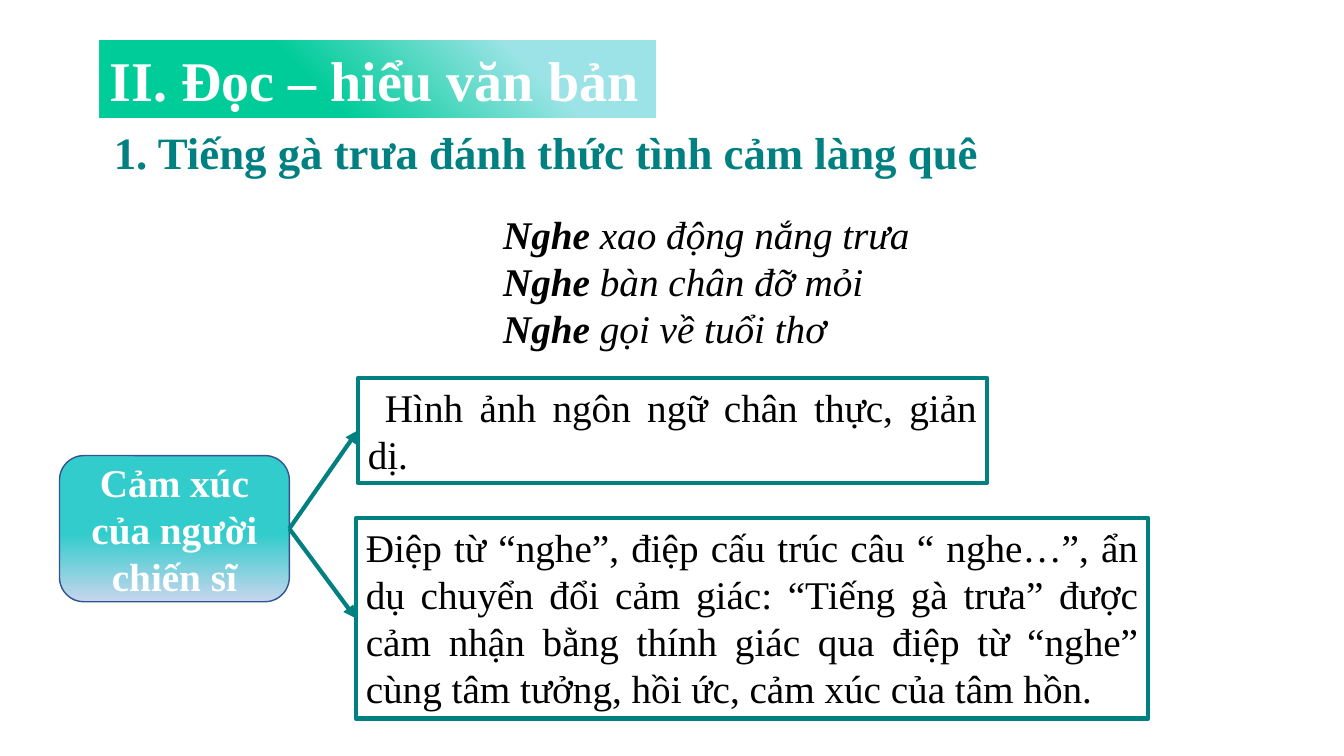
from dataclasses import dataclass
from typing import Optional

from lxml.etree import SubElement
from pptx import Presentation
from pptx.dml.color import RGBColor
from pptx.dml.fill import FillFormat
from pptx.enum.shapes import MSO_CONNECTOR, MSO_SHAPE
from pptx.enum.text import MSO_ANCHOR, PP_ALIGN
from pptx.oxml.ns import qn
from pptx.shapes.autoshape import Shape
from pptx.slide import Slide
from pptx.util import Inches, Pt

WIDE, HIGH = Inches(13.33), Inches(7.5)
FONT = "Times New Roman"
HUES = {
    "white": "FFFFFF", "black": "000000", "teal": "008080",
    "aqua": "9BE3E6", "green": "00CC99",
    "cyan": "33CCCC", "mist": "C7D5ED", "navy": "325491",
}


@dataclass(frozen=True)
class Fade:
    """Two (percent, colour) stops; turn is counter-clockwise degrees."""
    first: tuple[float, str]
    last: tuple[float, str]
    turn: float


@dataclass(frozen=True)
class Block:
    """Place and size are in percent of the slide's width and height."""
    left: float
    top: float
    width: float
    height: float
    lines: tuple[tuple[str, str], ...]  # bold start and plain rest
    size: float = 28
    color: str = "black"
    italic: bool = False
    form: Optional[MSO_SHAPE] = None
    fade: Optional[Fade] = None
    edge: Optional[tuple[str, float]] = None
    align: PP_ALIGN = PP_ALIGN.LEFT
    anchor: MSO_ANCHOR = MSO_ANCHOR.TOP
    inset: float = 0.1
    indent: float = 0
    spacing: float = 1
    after: float = 0


HEAD = Block(7.43, 5.33, 41.41, 10.27, (("II. Đọc – hiểu văn bản", ""),),
             size=40, color="white", form=MSO_SHAPE.RECTANGLE,
             fade=Fade((24, "aqua"), (61, "green"), 225))
TOPIC = Block(7.73, 14.8, 86.87, 8.93,
              (("1. Tiếng gà trưa đánh thức tình cảm làng quê", ""),),
              size=32, color="teal", spacing=1.15, after=10)
POEM = Block(26.48, 27.2, 45.99, 20.13,
             (("Nghe", " xao động nắng trưa"),
              ("Nghe", " bàn chân đỡ mỏi"),
              ("Nghe", " gọi về tuổi thơ")),
             italic=True, inset=1.46)
CAUSE = Block(4.43, 60.27, 17.1, 19.33, (("Cảm xúc của người chiến sĩ", ""),),
              color="white", form=MSO_SHAPE.ROUNDED_RECTANGLE,
              fade=Fade((54, "cyan"), (100, "mist"), 270), edge=("navy", 1),
              align=PP_ALIGN.CENTER, anchor=MSO_ANCHOR.MIDDLE)
NOTES = (
    Block(26.63, 50, 46.81, 13.87,
          (("", "Hình ảnh ngôn ngữ chân thực, giản dị."),),
          form=MSO_SHAPE.RECTANGLE, edge=("teal", 3),
          align=PP_ALIGN.JUSTIFY, indent=0.17),
    Block(26.48, 68.53, 58.96, 26.53,
          (("", "Điệp từ “nghe”, điệp cấu trúc câu “ nghe…”, ẩn dụ chuyển đổi "
                "cảm giác: “Tiếng gà trưa” được cảm nhận bằng thính giác qua "
                "điệp từ “nghe” cùng tâm tưởng, hồi ức, cảm xúc của tâm hồn."),),
          form=MSO_SHAPE.RECTANGLE, edge=("teal", 3), align=PP_ALIGN.JUSTIFY),
)


def hue(name: str) -> RGBColor:
    return RGBColor.from_string(HUES[name])


def blend(fill: FillFormat, fade: Fade) -> None:
    fill.gradient()
    fill.gradient_angle = fade.turn
    for stop, (share, name) in zip(fill.gradient_stops, (fade.first, fade.last)):
        stop.position = share / 100
        stop.color.rgb = hue(name)


def write(shape: Shape, block: Block) -> None:
    frame = shape.text_frame
    frame.word_wrap = True
    frame.vertical_anchor = block.anchor
    frame.margin_left = Inches(block.inset)
    for row, (strong, plain) in enumerate(block.lines):
        para = frame.add_paragraph() if row else frame.paragraphs[0]
        para.alignment = block.align
        para.line_spacing = block.spacing
        para.space_after = Pt(block.after)
        if block.indent:
            para._p.get_or_add_pPr().set("indent", str(Inches(block.indent)))
        font = para.font
        font.name, font.size = FONT, Pt(block.size)
        font.italic, font.bold = block.italic, not plain
        font.color.rgb = hue(block.color)
        for text in filter(None, (strong, plain)):
            run = para.add_run()
            run.text = text
            if strong and plain:
                run.font.bold = text == strong


def draw(slide: Slide, block: Block) -> Shape:
    area = [int(side * share / 100) for side, share in (
        (WIDE, block.left), (HIGH, block.top),
        (WIDE, block.width), (HIGH, block.height))]
    if block.form is None:
        shape = slide.shapes.add_textbox(*area)
    else:
        shape = slide.shapes.add_shape(block.form, *area)
        shape.shadow.inherit = False
        if block.fade:
            blend(shape.fill, block.fade)
        else:
            shape.fill.background()
        if block.edge:
            name, width = block.edge
            shape.line.color.rgb = hue(name)
            shape.line.width = Pt(width)
        else:
            shape.line.fill.background()
    write(shape, block)
    return shape


def link(slide: Slide, start: Shape, end: Shape) -> None:
    """Arrow from the right side of start to the left side of end."""
    arrow = slide.shapes.add_connector(MSO_CONNECTOR.STRAIGHT, 0, 0, 0, 0)
    arrow.begin_connect(start, 3)
    arrow.end_connect(end, 1)
    arrow.line.color.rgb = hue("teal")
    arrow.line.width = Pt(3)
    SubElement(arrow.line._get_or_add_ln(), qn("a:tailEnd"), type="triangle")
    SubElement(arrow._element.spPr, qn("a:effectLst"))


def main() -> None:
    deck = Presentation()
    deck.slide_width, deck.slide_height = WIDE, HIGH
    slide = deck.slides.add_slide(deck.slide_layouts[6])
    for block in (HEAD, TOPIC, POEM):
        draw(slide, block)
    cause = draw(slide, CAUSE)
    for note in NOTES:
        link(slide, cause, draw(slide, note))
    deck.save("out.pptx")


if __name__ == "__main__":
    main()
